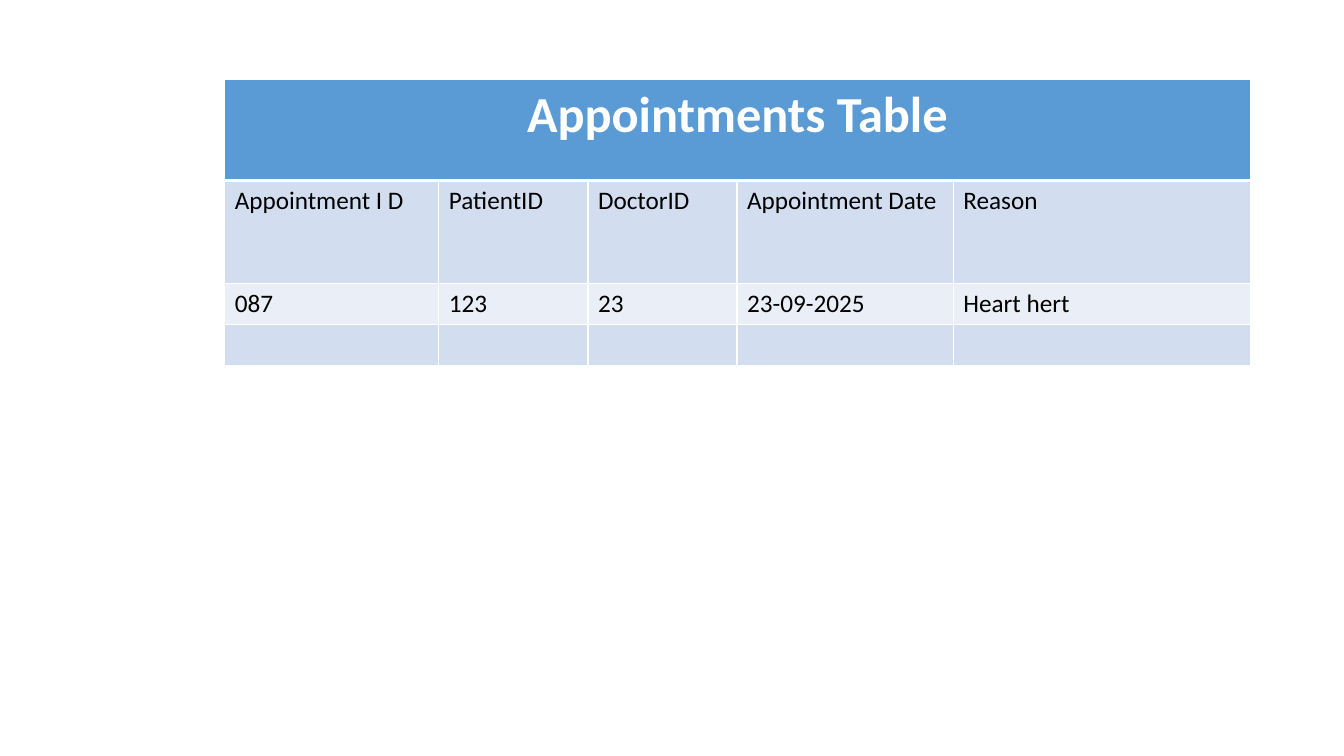
from lxml import etree
from pptx import Presentation
from pptx.dml.color import RGBColor
from pptx.enum.text import PP_ALIGN
from pptx.oxml.ns import qn
from pptx.util import Pt

EMU_PER_PX = 9525
EMU_PER_POINT = 12700
BLANK_LAYOUT = 6
CENTER = PP_ALIGN.CENTER
LEFT = PP_ALIGN.LEFT

TITLE = "Appointments Table"
COLUMN_WIDTHS = [204, 142, 142, 206, 283]
ROW_HEIGHTS = [96, 98, 39, 39]
ROWS = [
    ["Appointment I D", "PatientID", "DoctorID", "Appointment Date", "Reason"],
    ["087", "123", "23", "23-09-2025", "Heart hert"],
    [""] * 5,
]


def px(length):
    return length * EMU_PER_PX


def color(value):
    return RGBColor.from_string(value)


class SlideBuilder:
    font = "Calibri"
    header_fill = "5B9BD5"
    band_fills = ["D2DEEF", "EAEFF7"]
    border_color = "FFFFFF"

    def __init__(self, presentation):
        self.slide = presentation.slides.add_slide(
            presentation.slide_layouts[BLANK_LAYOUT])

    def table(self, left, top, title, rows):
        row_count, column_count = len(rows) + 1, len(COLUMN_WIDTHS)
        table = self.slide.shapes.add_table(
            row_count, column_count, px(left), px(top),
            px(sum(COLUMN_WIDTHS)), px(sum(ROW_HEIGHTS))).table
        for column, width in zip(table.columns, COLUMN_WIDTHS):
            column.width = px(width)
        for row, height in zip(table.rows, ROW_HEIGHTS):
            row.height = px(height)

        for cell in table.rows[0].cells:
            self.cell(cell, "", self.header_fill, bottom=3)
        table.cell(0, 0).merge(table.cell(0, column_count - 1))
        self.text(table.cell(0, 0), title, 36, "FFFFFF", True, CENTER)

        for index, values in enumerate(rows):
            fill = self.band_fills[index % 2]
            for cell, value in zip(table.rows[index + 1].cells, values):
                self.cell(cell, value, fill, top=3 if index == 0 else 1)

    def cell(self, cell, value, fill, top=1, bottom=1):
        cell.fill.solid()
        cell.fill.fore_color.rgb = color(fill)
        self.borders(cell, {"lnL": 1, "lnR": 1, "lnT": top, "lnB": bottom})
        self.text(cell, value, 18, "000000", False, LEFT)

    def text(self, cell, value, size, font_color, bold, alignment):
        cell.text_frame.text = value
        paragraph = cell.text_frame.paragraphs[0]
        paragraph.alignment = alignment
        for run in paragraph.runs:
            run.font.name = self.font
            run.font.size = Pt(size)
            run.font.bold = bold
            run.font.color.rgb = color(font_color)

    def borders(self, cell, widths):
        properties = cell._tc.get_or_add_tcPr()
        for position, (side, width) in enumerate(widths.items()):
            line = etree.Element(qn(f"a:{side}"), w=str(width * EMU_PER_POINT))
            fill = etree.SubElement(line, qn("a:solidFill"))
            etree.SubElement(fill, qn("a:srgbClr"), val=self.border_color)
            properties.insert(position, line)


def main():
    presentation = Presentation()
    presentation.slide_width = px(1280)
    presentation.slide_height = px(720)
    builder = SlideBuilder(presentation)
    builder.table(214, 76, TITLE, ROWS)
    presentation.save("out.pptx")


if __name__ == "__main__":
    main()
